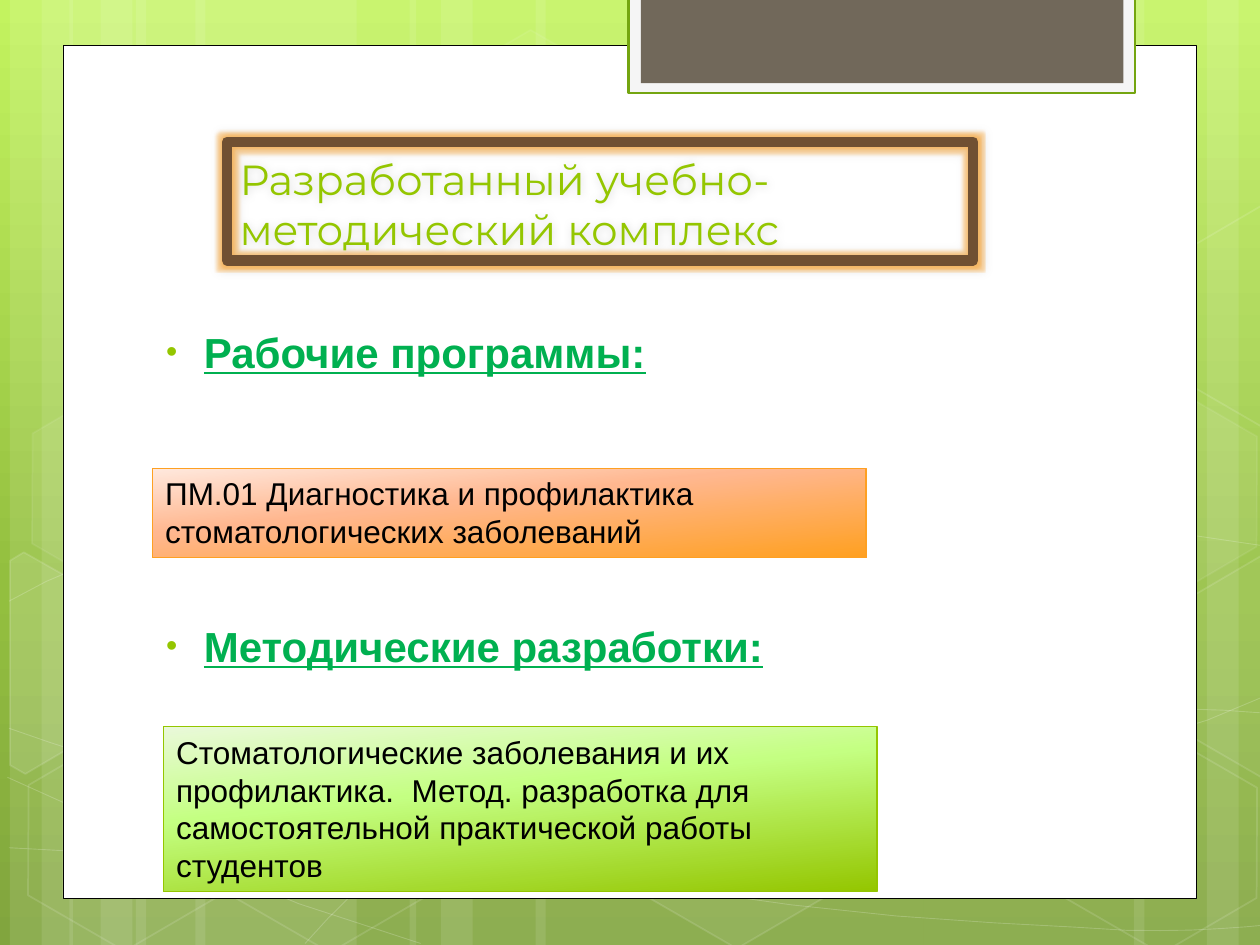
import math

from lxml import etree
from pptx import Presentation
from pptx import util as u
from pptx.dml.color import RGBColor
from pptx.enum import shapes, text
from pptx.oxml import parse_xml
from pptx.oxml.ns import nsdecls, qn

COLORS = {
    "white": "FFFFFF", "black": "000000", "tab": "F5F5F5", "tab_line": "74A510",
    "tab_core": "71685A", "lime": "94C600", "heading": "00B050",
    "brown": "705032", "orange": "FEA022",
}
GRADIENTS = {
    "page": [(0, "C3F35F"), (62, "93BF3F"), (100, "81A53E")],
    "green": [(0, "EAF9DA"), (40, "C4FF82"), (100, "94C600")],
    "orange": [(0, "FFE9DE"), (40, "FFB78F"), (100, "FFA021")],
}


def paint(shape, fill=None, fill_alpha=100, line=None, width=1, line_alpha=100):
    """Set flat fill and line; opacity is in percent, None means absent."""
    shape.shadow.inherit = False
    parts = [(shape.fill, fill, fill_alpha), (shape.line.fill, line, line_alpha)]
    for part, color, alpha in parts:
        if not color or not alpha:
            part.background()
            continue
        part.solid()
        part.fore_color.rgb = RGBColor.from_string(COLORS[color])
        if alpha < 100:
            holder = shape._element.spPr
            if part is not parts[0][0]:
                holder = holder.find(qn("a:ln"))
            tone = holder.find(qn("a:solidFill")).find(qn("a:srgbClr"))
            etree.SubElement(tone, qn("a:alpha")).set("val", str(alpha * 1000))
    if line:
        shape.line.width = u.Pt(width)


def paint_gradient(fill, element, stops, angle):
    """Give a fill its colour stops and a clockwise angle."""
    fill.gradient()
    gradient = element.find(".//" + qn("a:gradFill"))
    stop_list = gradient.find(qn("a:gsLst"))
    for stop in list(stop_list):
        stop_list.remove(stop)
    for position, color in stops:
        stop = etree.SubElement(stop_list, qn("a:gs"), pos=str(position * 1000))
        etree.SubElement(stop, qn("a:srgbClr"), val=color)
    gradient.find(qn("a:lin")).set("ang", str(angle * 60000))


deck = Presentation()
deck.slide_width, deck.slide_height = u.Cm(25.4), u.Cm(19.05)
page = deck.slides.add_slide(deck.slide_layouts[6])
paint_gradient(page.background.fill, page._element, GRADIENTS["page"], 90)

# Background stripes: left, width
stripes = [
    (2.74, 4.45), (0.2, 1.27), (0.84, 2.11), (3.94, 4.45), (1.4, 1.27), (2.03, 2.11),
    (18.62, 4.45), (24.33, 1.27), (22.86, 2.11), (10.8, 7.82), (8.26, 1.27), (8.89, 2.11),
]
for left, width in stripes:
    stripe = page.shapes.add_shape(
        shapes.MSO_SHAPE.RECTANGLE, u.Cm(left), 0, u.Cm(width), deck.slide_height)
    paint(stripe, "white", 10)

# Background curves: a start, then three points for each Bezier segment
curves = [
    [(0.18, 17.09), (1.55, 17.17), (2.92, 17.25), (4.83, 17.22), (6.73, 17.2),
     (9.09, 17.15), (11.63, 16.89), (14.17, 16.64), (17.78, 16.15), (20.12, 15.67),
     (22.43, 15.19), (24.82, 14.43), (25.58, 14)],
    [(0.18, 12.12), (0.91, 11.71), (1.65, 11.33), (3.07, 10.95), (4.52, 10.57),
     (6.58, 10.01), (8.81, 9.83), (11.07, 9.65), (13.82, 9.63), (16.61, 9.83),
     (19.41, 10.03), (24.05, 10.82), (25.58, 11.02)],
    [(0.15, 15.67), (3.23, 17.07), (6.27, 18.47), (8.48, 19.02)],
    [(0.18, 14.68), (0.97, 14.96), (1.78, 15.24), (3.25, 15.65), (4.72, 16.03),
     (6.93, 16.66), (9.07, 17.09), (11.18, 17.53), (13.84, 17.98), (15.95, 18.24),
     (18.06, 18.52), (20.32, 18.62), (21.67, 18.69), (22.99, 18.8), (23.34, 18.75),
     (24, 18.75), (24.66, 18.72), (25.12, 18.69), (25.58, 18.64)],
    [(6.15, 19.02), (6.6, 18.52), (7.06, 18.01), (7.67, 17.55), (8.28, 17.09),
     (9.14, 16.59), (9.86, 16.23), (10.57, 15.88), (11, 15.72), (11.94, 15.47),
     (12.85, 15.21), (14.55, 14.86), (15.44, 14.68), (16.36, 14.5), (16.48, 14.5),
     (17.27, 14.45), (18.06, 14.38), (19.3, 14.3), (20.17, 14.27), (21.06, 14.25),
     (22.5, 14.27), (22.5, 14.27), (23.07, 14.27), (24.99, 14.3), (25.55, 14.38)],
]
STEPS = 3
for curve in curves:
    points = []
    for first in range(0, len(curve) - 1, 3):
        for step in range(1, STEPS + 1):
            t = step / STEPS
            weights = [(1 - t) ** 3, 3 * t * (1 - t) ** 2, 3 * t * t * (1 - t), t ** 3]
            points.append([
                u.Cm(sum(w * p[axis] for w, p in zip(weights, curve[first:first + 4])))
                for axis in (0, 1)])
    outline = page.shapes.build_freeform(u.Cm(curve[0][0]), u.Cm(curve[0][1]))
    outline.add_line_segments(points, close=False)
    paint(outline.convert_to_shape(), line="white", width=0.5, line_alpha=20)

# Hexagons: left, top, fill opacity, line opacity
TILT = 30
hexagons = [
    (8.48, 0.91, 4, 8), (12.62, 14.96, 6, 12), (0.28, 15.01, 0, 12), (0.36, 7.92, 7, 8),
    (4.42, 15.04, 0, 12), (19.13, 11.51, 10, 12), (21.18, 15.06, 0, 12),
    (21.18, 7.98, 7, 8),
]
for left, top, fill_alpha, line_alpha in hexagons:
    hexagon = page.shapes.add_shape(
        shapes.MSO_SHAPE.HEXAGON, u.Cm(left), u.Cm(top), u.Cm(4.45), u.Cm(3.86))
    hexagon.adjustments[0] = 0.285
    hexagon.rotation = TILT
    paint(hexagon, "white", fill_alpha, "white", 1, line_alpha)

# Hexagons cut by the page edges: fill opacity, turning centre, corners as seen
cut_hexagons = [
    (10, (0.91, 13.59), [(0.2, 11.3), (0.48, 11.13), (2.44, 12.24), (2.41, 14.48),
                         (0.51, 15.6), (0.2, 15.42)]),
    (4, (25.02, 13.21), [(23.52, 12.32), (25.43, 11.2), (25.63, 11.33), (25.63, 15.57),
                         (25.45, 15.67), (23.52, 14.55)]),
    (0, (25.02, 6.12), [(23.52, 5.26), (25.43, 4.14), (25.65, 4.27), (25.63, 8.51),
                        (25.45, 8.61), (23.52, 7.49)]),
]
cosine, sine = math.cos(math.radians(TILT)), math.sin(math.radians(TILT))
for fill_alpha, (middle_x, middle_y), corners in cut_hexagons:
    points = [
        (u.Cm(middle_x + (x - middle_x) * cosine + (y - middle_y) * sine),
         u.Cm(middle_y + (y - middle_y) * cosine - (x - middle_x) * sine))
        for x, y in corners]
    outline = page.shapes.build_freeform(*points[0])
    outline.add_line_segments(points[1:], close=True)
    piece = outline.convert_to_shape()
    piece.rotation = TILT
    paint(piece, "white", fill_alpha, "white", 1, 12)

# White sheet and the tab at its top
plates = [
    ((1.27, 0.91, 22.86, 17.2), {"fill": "white", "line": "black", "width": 0.5}),
    ((12.67, -0.05, 10.21, 1.93), {"fill": "tab", "line": "tab_line", "width": 1.25}),
    ((12.92, -0.05, 9.73, 1.73), {"fill": "tab_core"}),
]
for place, look in plates:
    plate = page.shapes.add_shape(shapes.MSO_SHAPE.RECTANGLE, *map(u.Cm, place))
    paint(plate, **look)

# Bulleted headings
box = page.shapes.add_textbox(u.Cm(2.89), u.Cm(6.45), u.Cm(18.82), u.Cm(9.75))
box.text_frame.word_wrap = True
heading_format = {"name": "Arial", "size": u.Pt(24), "bold": True, "underline": True}
headings = [("Рабочие программы:", 4.8), ("Методические разработки:", 139.5)]
for index, (words, space) in enumerate(headings):
    para = box.text_frame.add_paragraph() if index else box.text_frame.paragraphs[0]
    para.space_before = u.Pt(space)
    span = para.add_run()
    span.text = words
    for name, value in heading_format.items():
        setattr(span.font, name, value)
    span.font.color.rgb = RGBColor.from_string(COLORS["heading"])
    properties = para._p.get_or_add_pPr()
    properties.set("marL", str(u.Cm(0.97)))
    properties.set("indent", str(u.Cm(-0.76)))
    bullet_color = etree.SubElement(properties, qn("a:buClr"))
    etree.SubElement(bullet_color, qn("a:srgbClr"), val=COLORS["lime"])
    etree.SubElement(properties, qn("a:buSzPct"), val="76000")
    etree.SubElement(properties, qn("a:buFont"), typeface="Arial")
    etree.SubElement(properties, qn("a:buChar"), char="•")

# Framed title and the two gradient panels
panels = [
    {"words": "Разработанный учебно-методический комплекс",
     "place": (4.58, 2.86, 15.04, 2.39), "gradient": None, "line": "brown", "width": 6,
     "font": "Montserrat", "size": 24, "color": "lime", "anchor": text.MSO_ANCHOR.BOTTOM},
    {"words": "Стоматологические заболевания и их профилактика.  Метод. разработка "
              "для самостоятельной практической работы студентов",
     "place": (3.3, 14.65, 14.38, 3.33), "gradient": "green", "line": "lime", "width": 0.75,
     "font": "Arial", "size": 18, "color": "black", "anchor": text.MSO_ANCHOR.TOP},
    {"words": "ПМ.01 Диагностика и профилактика стоматологических заболеваний",
     "place": (3.08, 9.44, 14.38, 1.8), "gradient": "orange", "line": "orange",
     "width": 0.75, "font": "Arial", "size": 18, "color": "black",
     "anchor": text.MSO_ANCHOR.TOP},
]
for panel in panels:
    box = page.shapes.add_shape(shapes.MSO_SHAPE.RECTANGLE, *map(u.Cm, panel["place"]))
    paint(box, line=panel["line"], width=panel["width"])
    if panel["gradient"]:
        paint_gradient(box.fill, box._element, GRADIENTS[panel["gradient"]], 84)
    else:
        properties = box._element.spPr
        properties.remove(properties.find(qn("a:effectLst")))
        etree.SubElement(properties.find(qn("a:ln")), qn("a:round"))
        properties.append(parse_xml(
            f'<a:effectLst {nsdecls("a")}><a:glow rad="{u.Pt(2)}">'
            f'<a:srgbClr val="{COLORS["orange"]}"><a:alpha val="40000"/></a:srgbClr></a:glow>'
            f'<a:outerShdw blurRad="{u.Pt(5)}" dist="0" dir="13500000">'
            f'<a:srgbClr val="{COLORS["black"]}"><a:alpha val="15000"/></a:srgbClr>'
            '</a:outerShdw></a:effectLst>'))
    frame = box.text_frame
    frame.word_wrap = True
    frame.vertical_anchor = panel["anchor"]
    para = frame.paragraphs[0]
    para.alignment = text.PP_ALIGN.LEFT
    span = para.add_run()
    span.text = panel["words"]
    for name, value in {"name": panel["font"], "size": u.Pt(panel["size"])}.items():
        setattr(span.font, name, value)
    span.font.color.rgb = RGBColor.from_string(COLORS[panel["color"]])

deck.save("out.pptx")
